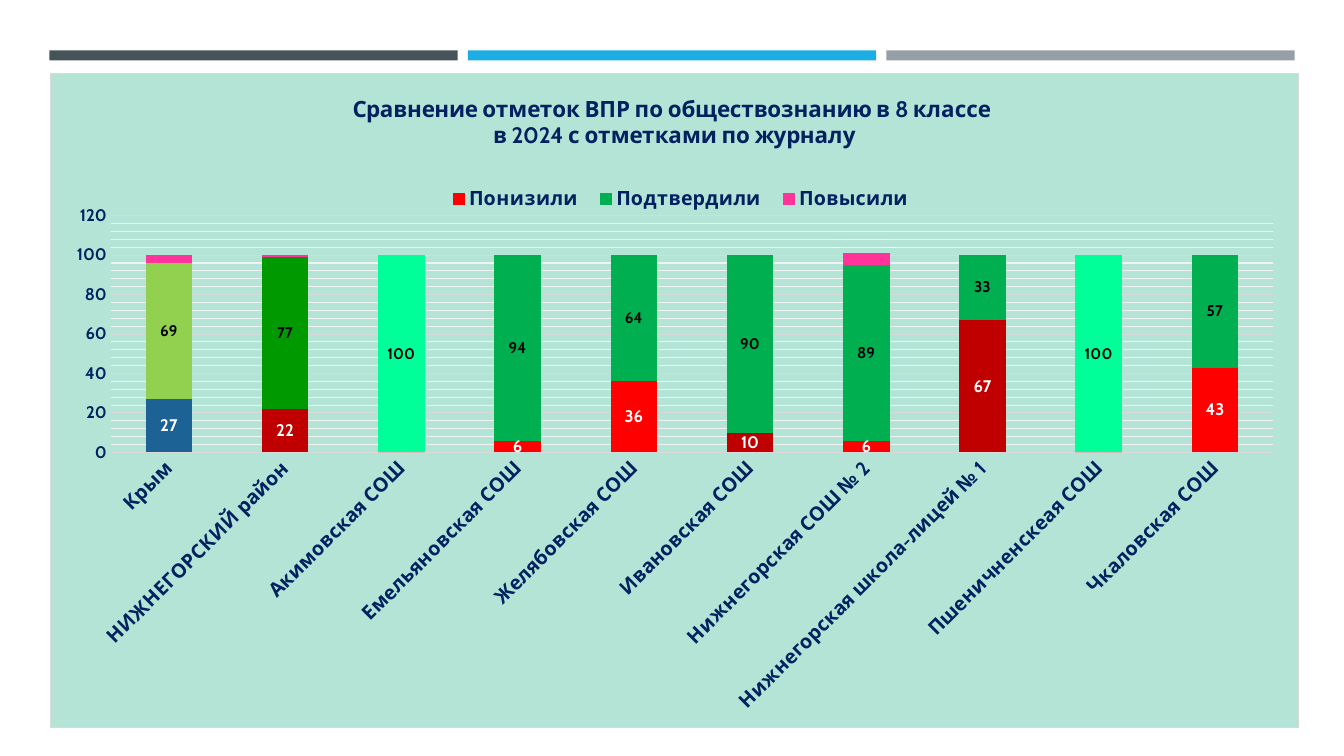
"""Build a slide with a stacked column chart comparing test marks with journal marks."""
from pptx import Presentation
from pptx.chart.data import CategoryChartData
from pptx.dml.color import RGBColor
from pptx.enum.chart import XL_CHART_TYPE, XL_LEGEND_POSITION, XL_TICK_MARK
from pptx.enum.shapes import MSO_SHAPE
from pptx.oxml import parse_xml
from pptx.util import Inches, Pt

FONT = "Cabin"
NAVY = RGBColor(0x00, 0x20, 0x60)
BLACK = RGBColor(0x00, 0x00, 0x00)
WHITE = RGBColor(0xFF, 0xFF, 0xFF)
GRAY = RGBColor(0xD9, 0xD9, 0xD9)
PALE = RGBColor(0xF2, 0xF2, 0xF2)
MINT = RGBColor(0xB3, 0xE4, 0xD6)
SLATE = RGBColor(0x46, 0x53, 0x59)
SKY = RGBColor(0x1C, 0xAD, 0xE4)
STEEL = RGBColor(0x96, 0x9F, 0xA7)
RED = RGBColor(0xFF, 0x00, 0x00)
DARK_RED = RGBColor(0xC0, 0x00, 0x00)
BLUE = RGBColor(0x1D, 0x62, 0x94)
GREEN = RGBColor(0x00, 0xB0, 0x50)
LIME = RGBColor(0x92, 0xD0, 0x50)
DEEP_GREEN = RGBColor(0x00, 0x99, 0x00)
SPRING = RGBColor(0x00, 0xFF, 0x99)
PINK = RGBColor(0xFF, 0x33, 0x99)

TITLE = ["Сравнение отметок ВПР по обществознанию в 8 классе ",
         "в 2024 с отметками по журналу"]
SCHOOLS = ["Крым", "НИЖНЕГОРСКИЙ район", "Акимовская СОШ", "Емельяновская СОШ",
           "Желябовская СОШ", "Ивановская СОШ", "Нижнегорская СОШ № 2",
           "Нижнегорская школа-лицей № 1", "Пшеничненскеая СОШ", "Чкаловская СОШ"]
SERIES = [
    {"name": "Понизили", "values": [27, 22, 0, 6, 36, 10, 6, 67, 0, 43],
     "color": RED, "label": (12, WHITE),
     "points": {0: BLUE, 1: DARK_RED, 5: DARK_RED, 7: DARK_RED, 8: DARK_RED}},
    {"name": "Подтвердили", "values": [69, 77, 100, 94, 64, 90, 89, 33, 100, 57],
     "color": GREEN, "label": (11, BLACK),
     "points": {0: LIME, 1: DEEP_GREEN, 2: SPRING, 8: SPRING}},
    {"name": "Повысили", "values": [4, 1, 0, 0, 0, 0, 6, 0, 0, 0],
     "color": PINK, "label": None, "points": {}},
]
BARS = [SLATE, SKY, STEEL]
BAR_LEFT, BAR_STEP, BAR_WIDTH = 0.49, 4.15, 4.05
LEGEND_BOX = (0.31, 0.17, 0.39, 0.045)
PLOT_BOX = (0.048, 0.218, 0.932, 0.362)
NS = ('xmlns:c="http://schemas.openxmlformats.org/drawingml/2006/chart" '
      'xmlns:a="http://schemas.openxmlformats.org/drawingml/2006/main"')


def style(font, size, color, bold=True):
    font.name, font.size, font.bold = FONT, Pt(size), bold
    font.color.rgb = color


def sp_pr(line, width, fill=None):
    body = f'<a:solidFill><a:srgbClr val="{fill}"/></a:solidFill>' if fill else ""
    return parse_xml(
        f'<c:spPr {NS}>{body}<a:ln w="{Pt(width)}"><a:solidFill>'
        f'<a:srgbClr val="{line}"/></a:solidFill></a:ln></c:spPr>')


def layout(box, inner=False):
    target = '<c:layoutTarget val="inner"/>' if inner else ""
    modes = "".join(f'<c:{k}Mode val="edge"/>' for k in "xy")
    sizes = "".join(f'<c:{k} val="{v}"/>' for k, v in zip("xywh", box))
    return parse_xml(f'<c:layout {NS}><c:manualLayout>{target}{modes}{sizes}'
                     '</c:manualLayout></c:layout>')


def add_bars(slide):
    for i, color in enumerate(BARS):
        s = slide.shapes.add_shape(
            MSO_SHAPE.RECTANGLE, Inches(BAR_LEFT + i * BAR_STEP), Inches(0.5),
            Inches(BAR_WIDTH), Inches(0.1))
        s.shadow.inherit = False
        s.fill.solid()
        s.fill.fore_color.rgb = color
        s.line.fill.background()


def style_series(plot):
    for ser, item in zip(plot.series, SERIES):
        ser.format.fill.solid()
        ser.format.fill.fore_color.rgb = item["color"]
        for i, color in item["points"].items():
            fill = ser.points[i].format.fill
            fill.solid()
            fill.fore_color.rgb = color
        if item["label"]:
            for i, value in enumerate(item["values"]):
                if value:
                    style(ser.points[i].data_label.font, *item["label"])
            ser.data_labels.show_value = False


def style_axes(chart):
    cat, val = chart.category_axis, chart.value_axis
    for axis, size in ((cat, 14), (val, 12)):
        axis.major_tick_mark = axis.minor_tick_mark = XL_TICK_MARK.NONE
        style(axis.tick_labels.font, size, NAVY)
    cat.format.line.color.rgb = GRAY
    cat.format.line.width = Pt(1)
    cat._element.txPr.bodyPr.set("rot", "-2700000")
    val.format.line.fill.background()
    val.minimum_scale, val.maximum_scale = 0, 120
    val.major_unit, val.minor_unit = 20, 4
    val.tick_labels.number_format = "0"
    val.tick_labels.number_format_is_linked = False
    val.has_major_gridlines = val.has_minor_gridlines = True
    val.major_gridlines.format.line.color.rgb = GRAY
    val.major_gridlines.format.line.width = Pt(0.75)
    val._element.minorGridlines.append(sp_pr(PALE, 0.75))


def add_marks_chart(slide):
    data = CategoryChartData(number_format="0")
    data.categories = SCHOOLS
    for item in SERIES:
        data.add_series(item["name"], item["values"])
    chart = slide.shapes.add_chart(
        XL_CHART_TYPE.COLUMN_STACKED, Inches(0.5), Inches(0.72),
        Inches(12.38), Inches(6.5), data).chart
    style(chart.font, 10, BLACK, False)
    chart._chartSpace.txPr.addprevious(sp_pr(GRAY, 0.75, MINT))

    chart.has_title = True
    tf = chart.chart_title.text_frame
    for i, line in enumerate(TITLE):
        p = tf.add_paragraph() if i else tf.paragraphs[0]
        r = p.add_run()
        r.text = line
        style(r.font, 16, NAVY)

    chart.has_legend = True
    legend = chart.legend
    legend.position = XL_LEGEND_POSITION.TOP
    legend.include_in_layout = False
    style(legend.font, 14, NAVY)
    legend._element.legendPos.addnext(layout(LEGEND_BOX))

    plot = chart.plots[0]
    plot.gap_width, plot.overlap, plot.vary_by_categories = 150, 100, False
    area = chart._chartSpace.chart.plotArea
    for old in area.findall("{*}layout"):
        area.remove(old)
    area.insert(0, layout(PLOT_BOX, inner=True))
    style_series(plot)
    style_axes(chart)


def main():
    prs = Presentation()
    prs.slide_width, prs.slide_height = Inches(13.33), Inches(7.5)
    slide = prs.slides.add_slide(prs.slide_layouts[6])
    add_bars(slide)
    add_marks_chart(slide)
    prs.save("out.pptx")


if __name__ == "__main__":
    main()
